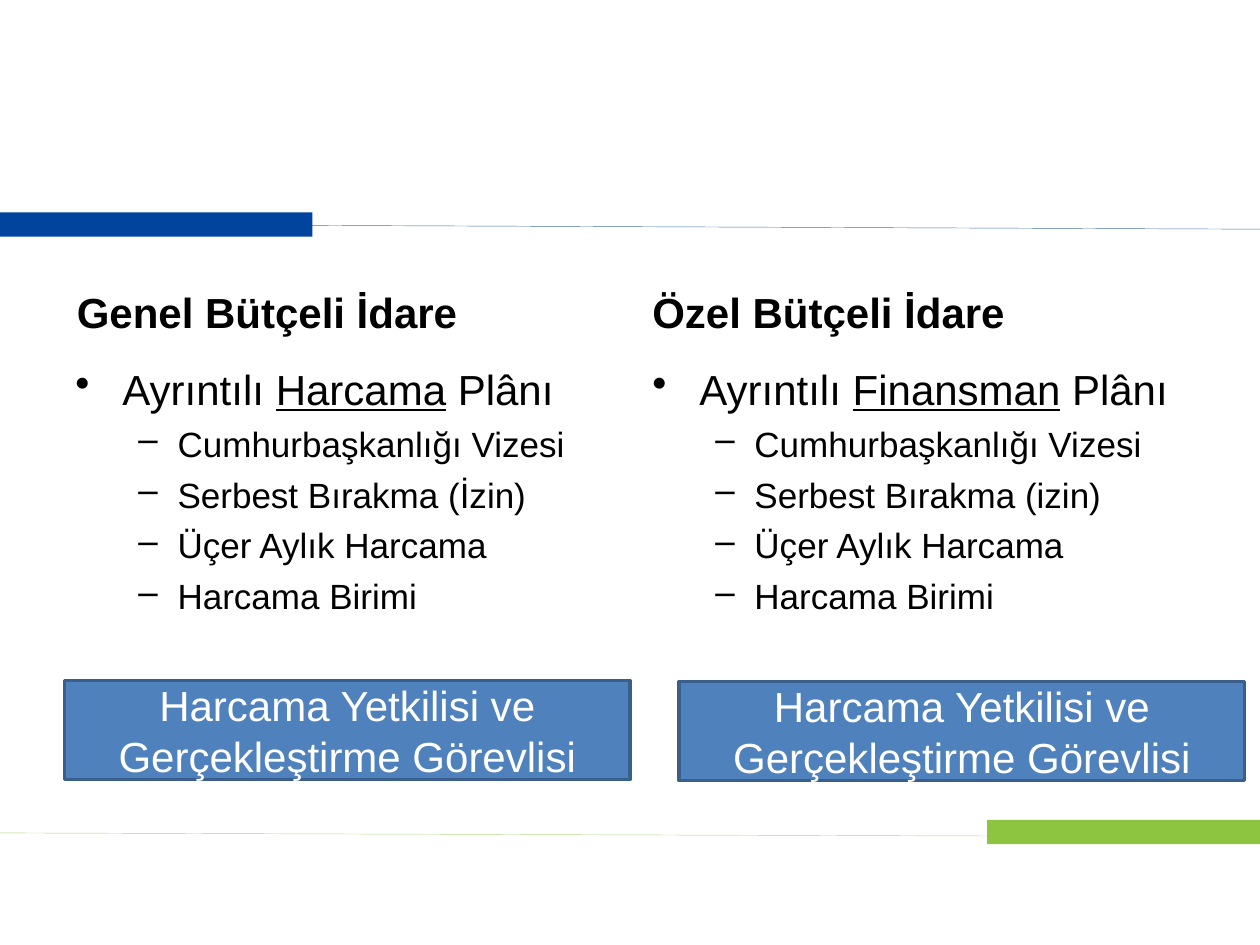
import pptx
import pptx.dml.color
import pptx.enum.shapes
import pptx.enum.text
import pptx.oxml.ns
import pptx.util
from lxml import etree

Cm, Pt = pptx.util.Cm, pptx.util.Pt
ANCHOR = pptx.enum.text.MSO_ANCHOR
ALIGN = pptx.enum.text.PP_ALIGN

COLORS = {
    "blue": "00449D", "blue line": "4372AF",
    "green": "8DC540", "green line": "B5D782",
    "button": "4F81BD", "button edge": "3A5F8C",
    "black": "000000", "white": "FFFFFF",
}
HEADING = {"size": Pt(24), "bold": True}
ITEM = {"size": Pt(24)}
SUBITEM = {"size": Pt(20)}

COLUMN_WIDTH = 11.23
BUTTON_TEXT = "Harcama Yetkilisi ve Gerçekleştirme Görevlisi"
# Heading, underlined plan word, permission word; left of heading, list, button; top of button
COLUMNS = [
    ("Genel Bütçeli İdare", "Harcama", "İzin", 1.3, 1.27, 1.3, 13.72),
    ("Özel Bütçeli İdare", "Finansman", "izin", 12.9, 12.9, 13.69, 13.74),
]


def color(name):
    return pptx.dml.color.RGBColor.from_string(COLORS[name])


def add_span(para, text, style, ink="black", underline=False):
    span = para.add_run()
    span.text = text
    for name, value in {"name": "Arial", "underline": underline, **style}.items():
        setattr(span.font, name, value)
    span.font.color.rgb = color(ink)


def add_bullet(para, symbol, margin, hanging):
    properties = para._p.get_or_add_pPr()
    properties.set("marL", str(Cm(margin)))
    properties.set("indent", str(-Cm(hanging)))
    bullet = etree.SubElement(properties, pptx.oxml.ns.qn("a:buChar"))
    bullet.set("char", symbol)


def add_bar(page, left, top, width, height, fill, edge=None):
    bar = page.shapes.add_shape(pptx.enum.shapes.MSO_SHAPE.RECTANGLE,
                                Cm(left), Cm(top), Cm(width), Cm(height))
    bar.shadow.inherit = False
    bar.fill.solid()
    bar.fill.fore_color.rgb = color(fill)
    if edge:
        bar.line.color.rgb = color(edge)
        bar.line.width = Pt(2)
    else:
        bar.line.fill.background()
    return bar


def add_rule(page, start, end, ink):
    rule = page.shapes.add_connector(pptx.enum.shapes.MSO_CONNECTOR.STRAIGHT,
                                     *map(Cm, start + end))
    rule.line.color.rgb = color(ink)
    rule.line.width = Pt(0.25)
    etree.SubElement(rule._element.spPr, pptx.oxml.ns.qn("a:effectLst"))


def add_text_box(page, left, top, height, anchor):
    box = page.shapes.add_textbox(Cm(left), Cm(top), Cm(COLUMN_WIDTH), Cm(height))
    box.text_frame.word_wrap = True
    box.text_frame.vertical_anchor = anchor
    return box.text_frame


def add_heading(page, left, text):
    frame = add_text_box(page, left, 5.13, 1.78, ANCHOR.BOTTOM)
    add_span(frame.paragraphs[0], text, HEADING)


def add_list(page, left, plan, permission):
    frame = add_text_box(page, left, 7.2, 5.6, ANCHOR.TOP)
    para = frame.paragraphs[0]
    add_bullet(para, "•", 0.95, 0.95)
    add_span(para, "Ayrıntılı ", ITEM)
    add_span(para, plan, ITEM, underline=True)
    add_span(para, " Plânı", ITEM)
    for text in ("Cumhurbaşkanlığı Vizesi", f"Serbest Bırakma ({permission})",
                 "Üçer Aylık Harcama", "Harcama Birimi"):
        para = frame.add_paragraph()
        para.level = 1
        para.space_before = Pt(5)
        add_bullet(para, "–", 2.06, 0.79)
        add_span(para, text, SUBITEM)


def add_button(page, left, top):
    button = add_bar(page, left, top, 11.4, 2, "button", "button edge")
    frame = button.text_frame
    frame.word_wrap = True
    frame.vertical_anchor = ANCHOR.MIDDLE
    para = frame.paragraphs[0]
    para.alignment = ALIGN.CENTER
    add_span(para, BUTTON_TEXT, ITEM, "white")


def main():
    deck = pptx.Presentation()
    deck.slide_width, deck.slide_height = Cm(25.4), Cm(19.05)
    page = deck.slides.add_slide(deck.slide_layouts[6])

    # Upper and lower bands
    add_rule(page, (0.03, 4.52), (25.4, 4.62), "blue line")
    add_bar(page, 0, 4.28, 6.3, 0.49, "blue")
    add_rule(page, (25.4, 16.87), (0, 16.79), "green line")
    add_bar(page, 19.9, 16.53, 5.5, 0.49, "green")

    # Two budget columns
    for heading, plan, permission, head_left, list_left, button_left, button_top in COLUMNS:
        add_heading(page, head_left, heading)
        add_list(page, list_left, plan, permission)
        add_button(page, button_left, button_top)

    deck.save("out.pptx")


if __name__ == "__main__":
    main()
